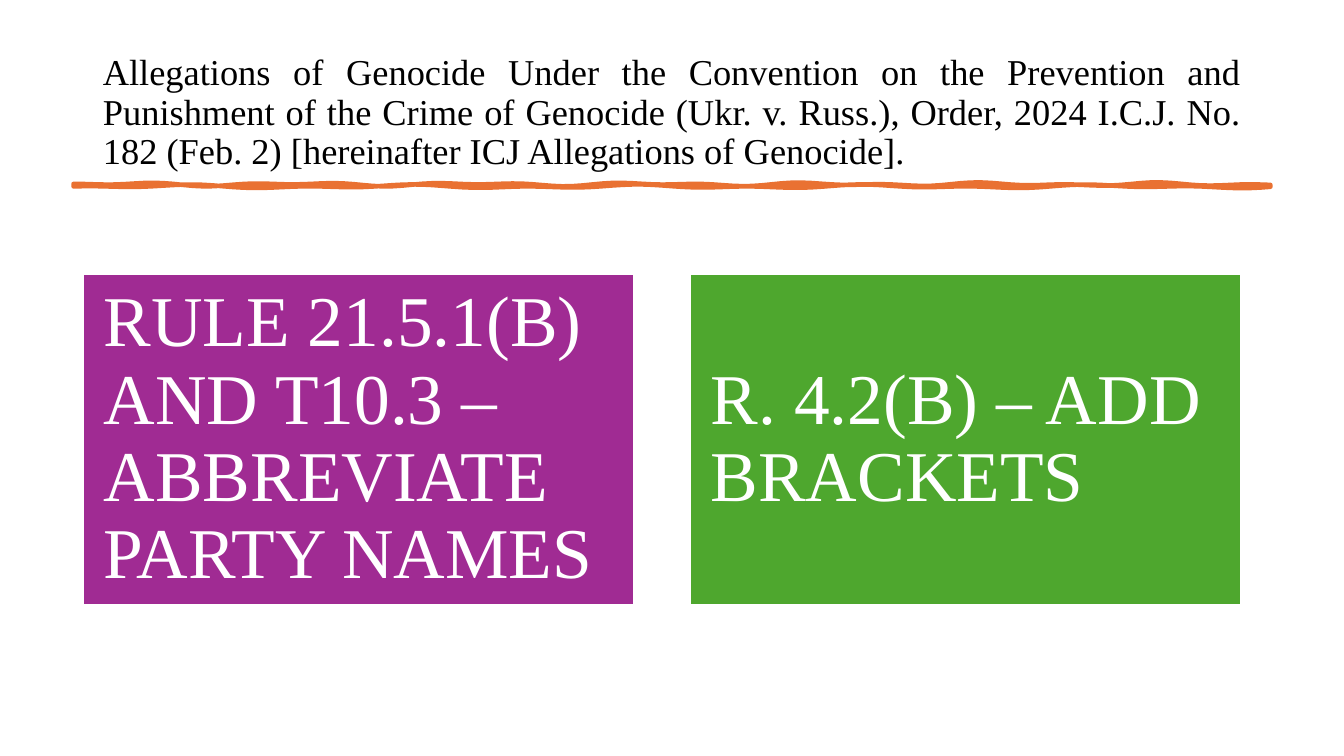
from dataclasses import dataclass
from math import pi, sin

from pptx import Presentation
from pptx.dml.color import RGBColor
from pptx.enum.shapes import MSO_SHAPE
from pptx.enum.text import MSO_ANCHOR, MSO_AUTO_SIZE, PP_ALIGN
from pptx.util import Inches, Pt

BLACK = RGBColor(0x00, 0x00, 0x00)
WHITE = RGBColor(0xFF, 0xFF, 0xFF)
ORANGE = RGBColor(0xE9, 0x71, 0x32)
PURPLE = RGBColor(0xA0, 0x2B, 0x93)
GREEN = RGBColor(0x4E, 0xA7, 0x2E)
FONT = "Times New Roman"

TITLE = ("Allegations of Genocide Under the Convention on the Prevention and "
         "Punishment of the Crime of Genocide (Ukr. v. Russ.), Order, 2024 I.C.J. "
         "No. 182 (Feb. 2) [hereinafter ICJ Allegations of Genocide].")

CARD_LEFT, CARD_TOP, CARD_WIDTH, CARD_HEIGHT = 0.82, 2.72, 5.47, 3.28
CARD_GAP = 0.55
BRUSH_LEFT, BRUSH_WIDTH, BRUSH_STEPS = 0.73, 11.87, 120


@dataclass
class Card:
    text: str
    fill: RGBColor


@dataclass
class BrushEdge:
    y: float
    amplitude: float
    long_wave: float
    short_wave: float

    def height_at(self, x: float) -> float:
        ripple = sin(2 * pi * x / self.long_wave) + sin(2 * pi * x / self.short_wave)
        return self.y + self.amplitude * ripple / 2


CARDS = [
    Card("RULE 21.5.1(B) AND T10.3 – ABBREVIATE PARTY NAMES", PURPLE),
    Card("R. 4.2(B) – ADD BRACKETS", GREEN),
]
TOP_EDGE = BrushEdge(y=1.83, amplitude=0.02, long_wave=1.7, short_wave=0.9)
BOTTOM_EDGE = BrushEdge(y=1.85, amplitude=0.02, long_wave=2.3, short_wave=1.1)


def write_text(sp, text: str, *, size: float, color: RGBColor,
               align: PP_ALIGN, inset_x: float, inset_y: float) -> None:
    tf = sp.text_frame
    tf.word_wrap = True
    tf.auto_size = MSO_AUTO_SIZE.NONE
    tf.vertical_anchor = MSO_ANCHOR.MIDDLE
    tf.margin_left = tf.margin_right = Inches(inset_x)
    tf.margin_top = tf.margin_bottom = Inches(inset_y)
    p = tf.paragraphs[0]
    p.alignment = align
    p.line_spacing = 0.9
    r = p.add_run()
    r.text = text
    r.font.name = FONT
    r.font.size = Pt(size)
    r.font.color.rgb = color


def paint(sp, *, fill: RGBColor, line: RGBColor, width: float) -> None:
    sp.shadow.inherit = False
    sp.fill.solid()
    sp.fill.fore_color.rgb = fill
    sp.line.color.rgb = line
    sp.line.width = Pt(width)


def add_title(s, text: str) -> None:
    sp = s.shapes.title
    sp.left, sp.top = Inches(0.92), Inches(0.4)
    sp.width, sp.height = Inches(11.5), Inches(1.45)
    write_text(sp, text, size=26, color=BLACK, align=PP_ALIGN.JUSTIFY,
               inset_x=0.1, inset_y=0.05)


def add_brush_line(s) -> None:
    xs = [BRUSH_LEFT + BRUSH_WIDTH * i / BRUSH_STEPS for i in range(BRUSH_STEPS + 1)]
    outline = [(x, TOP_EDGE.height_at(x)) for x in xs]
    outline += [(x, BOTTOM_EDGE.height_at(x)) for x in reversed(xs)]
    start, *rest = [(Inches(x), Inches(y)) for x, y in outline]
    builder = s.shapes.build_freeform(*start)
    builder.add_line_segments(rest, close=True)
    paint(builder.convert_to_shape(), fill=ORANGE, line=ORANGE, width=3.25)


def add_card(s, index: int, card: Card) -> None:
    left = CARD_LEFT + index * (CARD_WIDTH + CARD_GAP)
    sp = s.shapes.add_shape(MSO_SHAPE.RECTANGLE, Inches(left), Inches(CARD_TOP),
                            Inches(CARD_WIDTH), Inches(CARD_HEIGHT))
    paint(sp, fill=card.fill, line=WHITE, width=1.5)
    write_text(sp, card.text, size=51, color=WHITE, align=PP_ALIGN.LEFT,
               inset_x=0.21, inset_y=0.21)


def main() -> None:
    prs = Presentation()
    prs.slide_width, prs.slide_height = Inches(13.33), Inches(7.5)
    s = prs.slides.add_slide(prs.slide_layouts.get_by_name("Title Only"))
    add_title(s, TITLE)
    add_brush_line(s)
    for index, card in enumerate(CARDS):
        add_card(s, index, card)
    prs.save("out.pptx")


if __name__ == "__main__":
    main()
